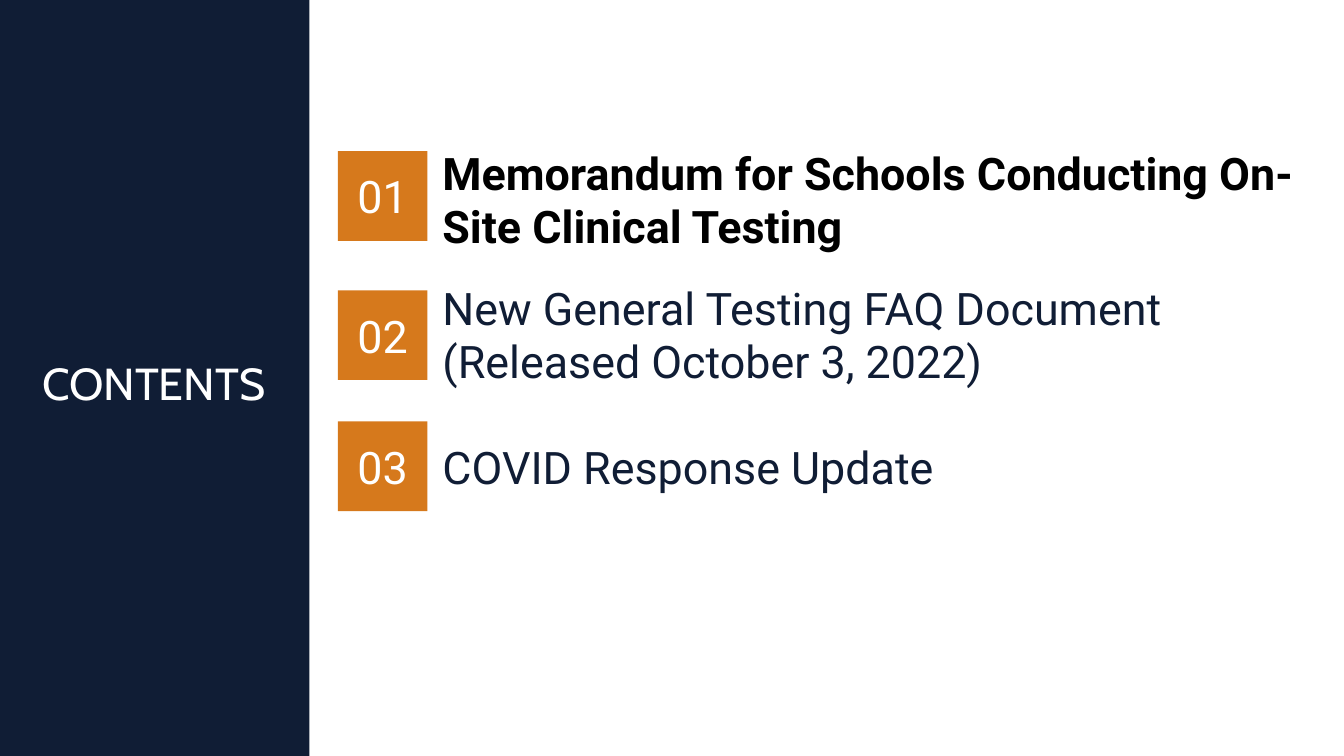
from pptx import Presentation
from pptx.dml.color import RGBColor as Rgb
from pptx.enum.shapes import MSO_SHAPE as Shape
from pptx.enum.text import MSO_ANCHOR as Anchor, PP_ALIGN as Align
from pptx.util import Inches, Pt

COLORS = {"navy": "101D35", "orange": "D6791C", "white": "FFFFFF", "black": "000000"}
SIDE = 0.89

# number, text, top of square, top of text, color, bold
ITEMS = [
    ("01", "Memorandum for Schools Conducting On-Site Clinical Testing",
     1.5, 1.53, "black", True),
    ("02", "New General Testing FAQ Document\n(Released October 3, 2022)",
     2.88, 2.87, "navy", False),
    ("03", "COVID Response Update", 4.18, 4.18, "navy", False),
]


class Deck:
    def __init__(self):
        self.prs = Presentation()
        self.prs.slide_width = Inches(13.33)
        self.prs.slide_height = Inches(7.5)
        self.slide = self.prs.slides.add_slide(self.prs.slide_layouts[6])
        self.size = Pt(32)

    def set_text(self, shape, text, color, font="Roboto", bold=False,
                 align=Align.LEFT, space=None):
        frame = shape.text_frame
        frame.word_wrap = True
        frame.vertical_anchor = Anchor.MIDDLE
        frame.text = text
        for para in frame.paragraphs:
            para.alignment = align
            para.line_spacing = space
            for run in para.runs:
                run.font.name = font
                run.font.size = self.size
                run.font.bold = bold
                run.font.color.rgb = Rgb.from_string(COLORS[color])

    def rect(self, x, y, w, h, fill):
        box = self.slide.shapes.add_shape(
            Shape.RECTANGLE, Inches(x), Inches(y), Inches(w), Inches(h))
        box.shadow.inherit = False
        box.fill.solid()
        box.fill.fore_color.rgb = Rgb.from_string(COLORS[fill])
        box.line.fill.background()
        return box

    def label(self, x, y, w, h, text, color, **style):
        box = self.slide.shapes.add_textbox(Inches(x), Inches(y), Inches(w), Inches(h))
        self.set_text(box, text, color, **style)

    def item(self, num, text, top, y, color, bold):
        """Add a numbered square and its text."""
        square = self.rect(3.35, top, SIDE, SIDE, "orange")
        self.set_text(square, num, "white", align=Align.CENTER)
        self.label(4.29, y, 8.73, SIDE, text, color, bold=bold)


def main():
    deck = Deck()
    deck.rect(0, 0, 3.07, 7.5, "navy")
    deck.label(0.32, 3.1, 2.76, 1.45, "CONTENTS", "white", font="Cabin", space=0.9)
    for item in ITEMS:
        deck.item(*item)
    deck.prs.save("out.pptx")


if __name__ == "__main__":
    main()
